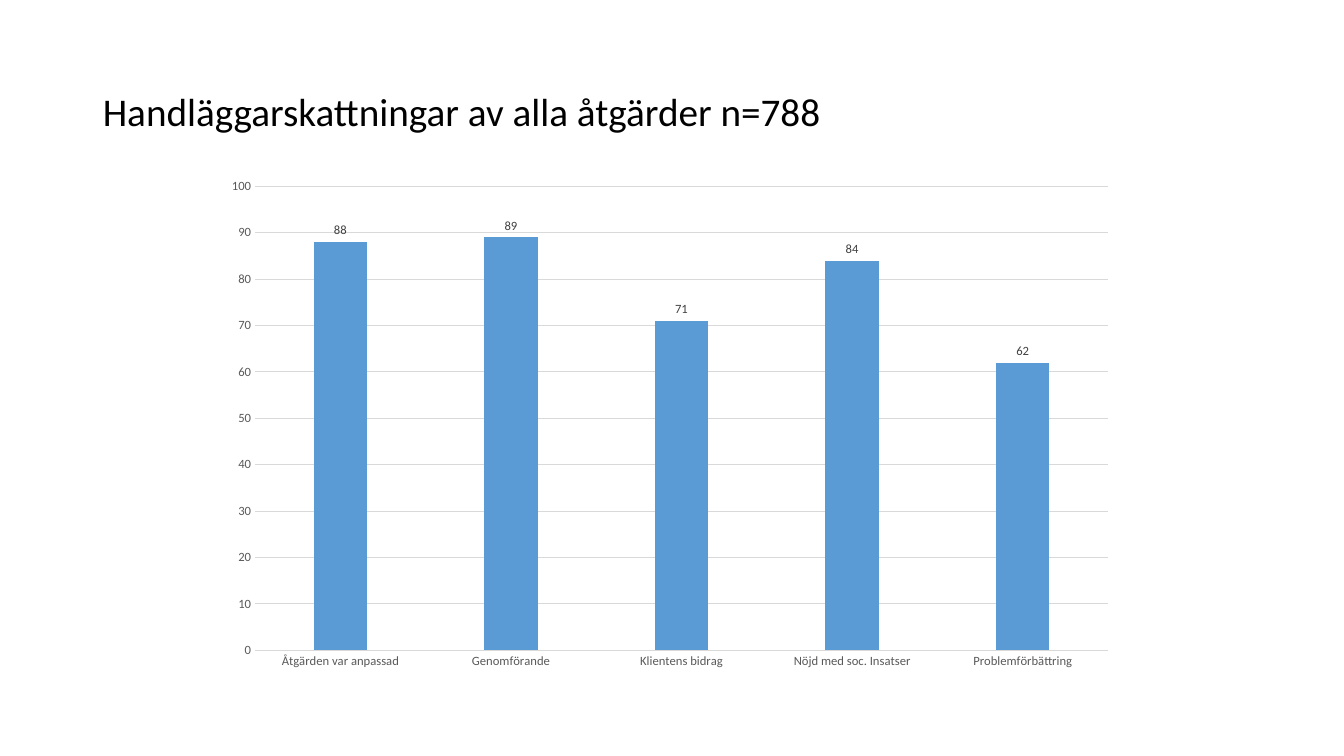
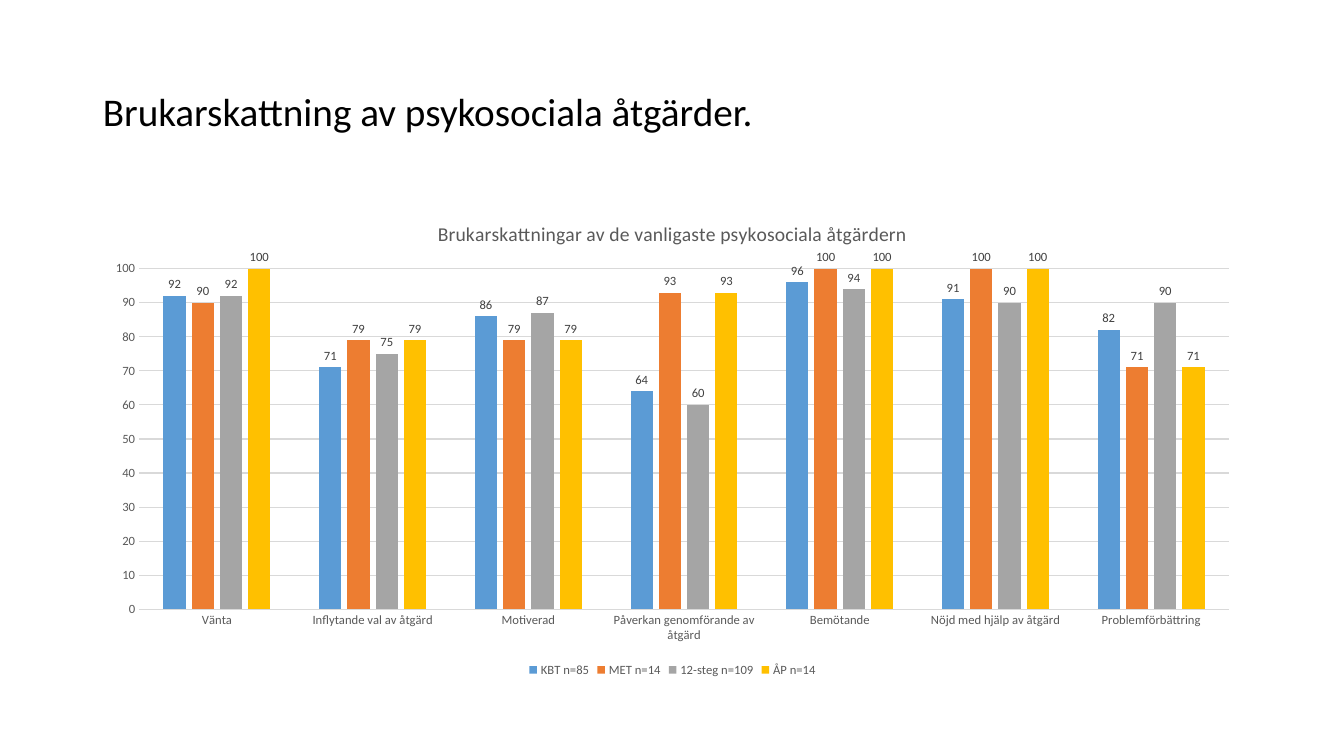
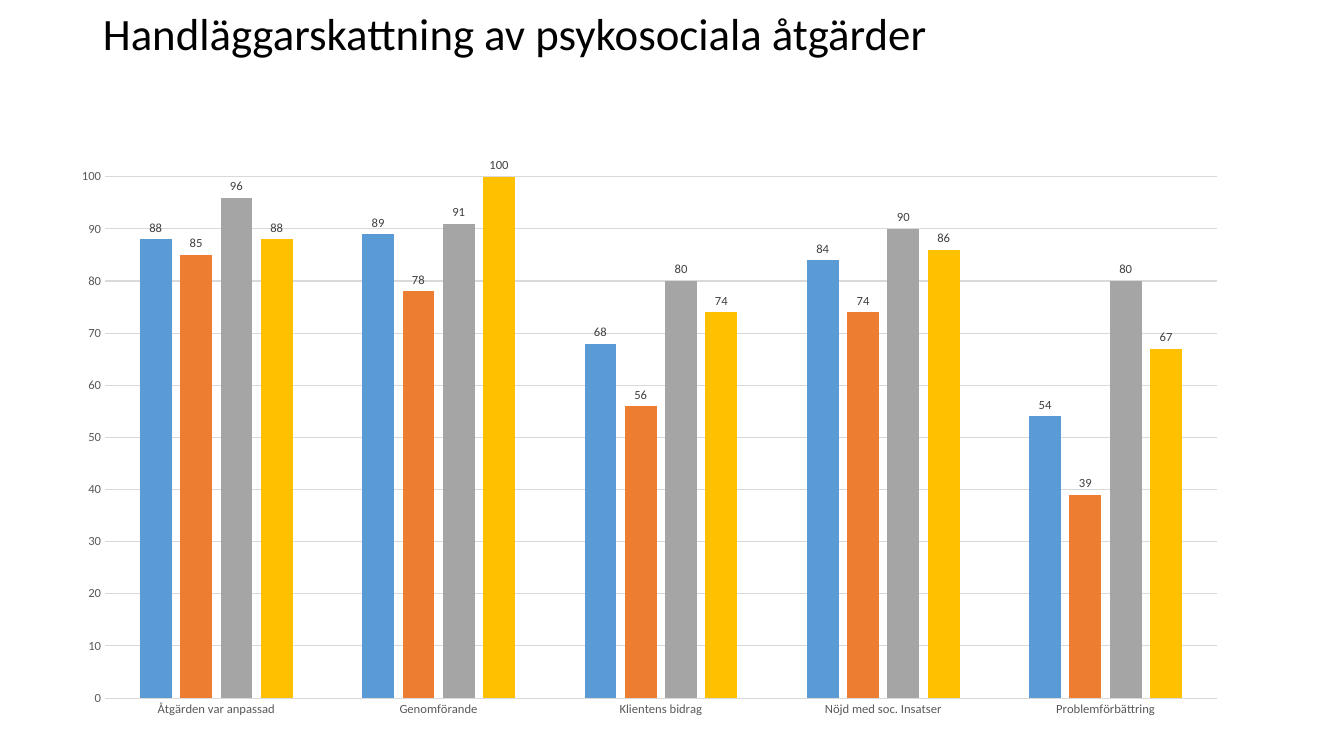
"""Build three slides of clustered column charts on ratings of interventions."""
import dataclasses

import pptx
import pptx.chart.data
import pptx.dml.color
import pptx.enum.chart
import pptx.enum.text
import pptx.oxml
import pptx.oxml.ns
import pptx.util

Inches = pptx.util.Inches
Pt = pptx.util.Pt
Color = pptx.dml.color.RGBColor.from_string


@dataclasses.dataclass(frozen=True)
class Theme:
    font: str = "Calibri"
    title_color: str = "000000"
    axis_color: str = "595959"
    label_color: str = "404040"
    line_color: str = "D9D9D9"
    series_colors: tuple = ("5B9BD5", "ED7D31", "A5A5A5", "FFC000")
    title_size: int = 28
    large_title_size: int = 32
    chart_title_size: int = 14
    chart_size: int = 10
    label_size: int = 9
    line_width: float = 0.75


theme = Theme()


def style_font(font, size, color):
    font.name = theme.font
    font.size = Pt(size)
    font.bold = False
    font.color.rgb = Color(color)


def write_text(frame, text, *, size, color, align=None, spacing=None):
    para = frame.paragraphs[0]
    para.alignment = align
    para.line_spacing = spacing
    span = para.add_run()
    span.text = text
    style_font(span.font, size, color)


handler_categories = [
    "Åtgärden var anpassad", "Genomförande", "Klientens bidrag",
    "Nöjd med soc. Insatser", "Problemförbättring",
]
user_categories = [
    "Vänta", "Inflytande val av åtgärd", "Motiverad",
    "Påverkan genomförande av åtgärd", "Bemötande",
    "Nöjd med hjälp av åtgärd", "Problemförbättring",
]
title_place = (0.92, 0.4, 11.5, 1.45)

pages = [
    {
        "title": "Handläggarskattningar av alla åtgärder n=788",
        "title_size": theme.title_size,
        "title_place": title_place,
        "chart_place": (2.17, 1.75, 9, 4.95),
        "plot_place": (0.04, 0.02, 0.94, 0.93),
        "chart_title": None,
        "legend": False,
        "categories": handler_categories,
        "series": {"Series 1": (88, 89, 71, 84, 62)},
    },
    {
        "title": "Brukarskattning av psykosociala åtgärder.",
        "title_size": theme.title_size,
        "title_place": title_place,
        "chart_place": (0.92, 2, 11.5, 4.76),
        "plot_place": (0.04, 0.14, 0.94, 0.71),
        "chart_title": "Brukarskattningar av de vanligaste psykosociala åtgärdern",
        "legend": True,
        "categories": user_categories,
        "series": {
            "KBT n=85": (92, 71, 86, 64, 96, 91, 82),
            "MET n=14": (90, 79, 79, 93, 100, 100, 71),
            "12-steg n=109": (92, 75, 87, 60, 94, 90, 90),
            "ÅP n=14": (100, 79, 79, 93, 100, 100, 71),
        },
    },
    {
        "title": "Handläggarskattning av psykosociala åtgärder",
        "title_size": theme.large_title_size,
        "title_place": (0.92, -0.29, 11.5, 1.29),
        "chart_place": (0.69, 1.57, 11.73, 6.29),
        "plot_place": (0.03, 0.02, 0.94, 0.83),
        "chart_title": None,
        "legend": False,
        "categories": handler_categories,
        "series": {
            "Series 1": (88, 89, 68, 84, 54),
            "Series 2": (85, 78, 56, 74, 39),
            "Series 3": (96, 91, 80, 90, 80),
            "Series 4": (88, 100, 74, 86, 67),
        },
    },
]

deck = pptx.Presentation()
deck.slide_width = Inches(13.33)
deck.slide_height = Inches(7.5)
title_only = deck.slide_layouts[5]

for content in pages:
    page = deck.slides.add_slide(title_only)
    title = page.shapes.title
    title.left, title.top, title.width, title.height = map(Inches, content["title_place"])
    title.text_frame.vertical_anchor = pptx.enum.text.MSO_ANCHOR.MIDDLE
    write_text(
        title.text_frame, content["title"], size=content["title_size"],
        color=theme.title_color, align=pptx.enum.text.PP_ALIGN.LEFT, spacing=0.9,
    )

    data = pptx.chart.data.CategoryChartData(number_format="0")
    data.categories = content["categories"]
    for name, values in content["series"].items():
        data.add_series(name, values)
    chart = page.shapes.add_chart(
        pptx.enum.chart.XL_CHART_TYPE.COLUMN_CLUSTERED,
        *map(Inches, content["chart_place"]), data,
    ).chart
    style_font(chart.font, theme.chart_size, theme.title_color)

    chart.has_title = content["chart_title"] is not None
    if chart.has_title:
        write_text(
            chart.chart_title.text_frame, content["chart_title"],
            size=theme.chart_title_size, color=theme.axis_color,
        )
    chart.has_legend = content["legend"]
    if chart.has_legend:
        chart.legend.position = pptx.enum.chart.XL_LEGEND_POSITION.BOTTOM
        chart.legend.include_in_layout = False
        style_font(chart.legend.font, theme.label_size, theme.axis_color)

    for axis in (chart.category_axis, chart.value_axis):
        axis.major_tick_mark = pptx.enum.chart.XL_TICK_MARK.NONE
        axis.minor_tick_mark = pptx.enum.chart.XL_TICK_MARK.NONE
        style_font(axis.tick_labels.font, theme.label_size, theme.axis_color)
    chart.value_axis.minimum_scale = 0
    chart.value_axis.maximum_scale = 100
    chart.value_axis.major_unit = 10
    chart.value_axis.format.line.fill.background()
    chart.value_axis.has_major_gridlines = True
    for line in (chart.category_axis.format.line, chart.value_axis.major_gridlines.format.line):
        line.color.rgb = Color(theme.line_color)
        line.width = Pt(theme.line_width)

    plot = chart.plots[0]
    plot.gap_width = 219
    plot.overlap = -27
    plot.vary_by_categories = False
    for series, color in zip(plot.series, theme.series_colors):
        series.format.fill.solid()
        series.format.fill.fore_color.rgb = Color(color)
        series.invert_if_negative = False
        labels = series.data_labels
        labels.show_value = True
        labels.position = pptx.enum.chart.XL_LABEL_POSITION.OUTSIDE_END
        style_font(labels.font, theme.label_size, theme.label_color)

    plot_area = chart.element.xpath("c:chart/c:plotArea")[0]
    for layout in plot_area.xpath("c:layout"):
        plot_area.remove(layout)
    settings = [("layoutTarget", "inner"), ("xMode", "edge"), ("yMode", "edge")]
    settings += zip("xywh", content["plot_place"])
    marks = "".join(f'<c:{name} val="{value}"/>' for name, value in settings)
    plot_area.insert(0, pptx.oxml.parse_xml(
        f'<c:layout {pptx.oxml.ns.nsdecls("c")}><c:manualLayout>{marks}</c:manualLayout></c:layout>'
    ))

deck.save("out.pptx")
